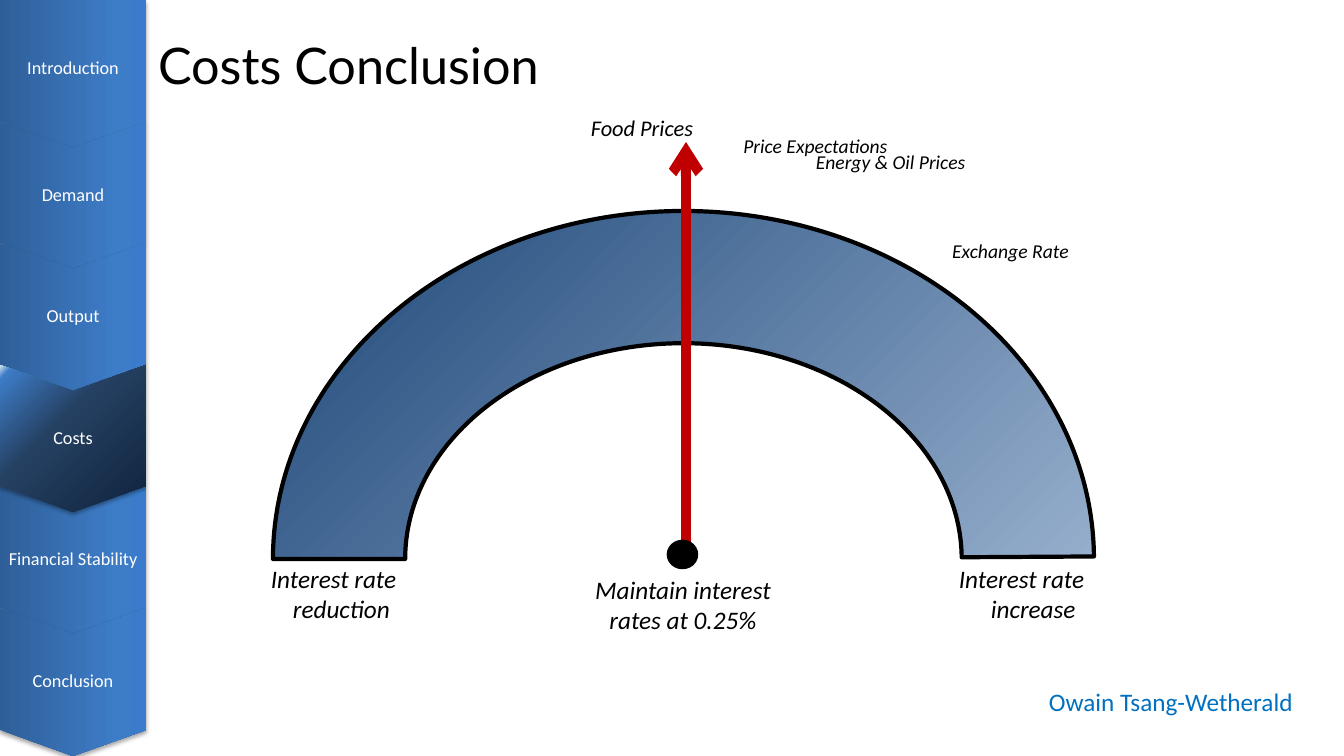
import pptx
import pptx.util
import pptx.dml.color
import pptx.enum.shapes
import pptx.enum.text
import pptx.oxml
import pptx.oxml.ns

COLORS = {"ink": "000000", "white": "FFFFFF", "author": "0070C0", "needle": "C00000"}
TAB_STOPS = [(0, "2F5F99"), (80, "3D7CC7"), (100, "3A7CCB")]
ACTIVE_STOPS = [(0, "0F243E"), (60, "254061"), (95, "3D7CC7"), (100, "DBEEF4")]
DIAL_STOPS = [(0, "B9CDE5"), (100, "1E4779")]

TABS = ["Introduction", "Demand", "Output", "Costs", "Financial Stability", "Conclusion"]
ACTIVE = "Costs"
TAB_W, TAB_STEP, TAB_TIP = 146, 121.6, 26

TITLE = ("Costs Conclusion", (140, 1, 417, 126), 36, "center", 0)
LABELS = [
    ("Interest rate reduction", (261, 558, 184, 72), 18, "left", 22),
    ("Interest rate increase", (949, 558, 184, 72), 18, "left", 32),
    ("Maintain interest rates at 0.25%", (575, 569, 216, 72), 18, "center", 0),
    ("Energy & Oil Prices", (806, 145, 188, 34), 14, "left", 0),
    ("Food Prices", (581, 109, 235, 37), 16, "left", 0),
    ("Exchange Rate", (897, 234, 227, 34), 14, "center", 0),
    ("Price Expectations", (702, 129, 227, 34), 14, "center", 0),
]
AUTHOR = ("Owain Tsang-Wetherald", (1039, 681, 290, 40), 18, "left", 0)

PX = 914400 / 100.8
NS = pptx.oxml.ns.nsdecls("a")
ALIGN = {"left": pptx.enum.text.PP_ALIGN.LEFT, "center": pptx.enum.text.PP_ALIGN.CENTER}
SHAPE = pptx.enum.shapes.MSO_SHAPE
MIDDLE = pptx.enum.text.MSO_ANCHOR.MIDDLE


def px(n):
    return pptx.util.Emu(round(n * PX))


def rgb(name):
    return pptx.dml.color.RGBColor.from_string(COLORS[name])


def set_font(p, size, color, name="Calibri", italic=False):
    p.font.size = pptx.util.Pt(size)
    p.font.name = name
    p.font.italic = italic
    p.font.color.rgb = rgb(color)


def add_label(slide, label, color="ink", name="Calibri", italic=False):
    text, box, size, align, hanging = label
    tf = slide.shapes.add_textbox(*map(px, box)).text_frame
    tf.word_wrap = True
    p = tf.paragraphs[0]
    p.text = text
    p.alignment = ALIGN[align]
    if hanging:
        pPr = p._p.get_or_add_pPr()
        pPr.set("marL", str(px(hanging)))
        pPr.set("indent", str(-px(hanging)))
    set_font(p, size, color, name, italic)
    return tf


def set_gradient(sp, stops, radial):
    gs = "".join(
        f'<a:gs pos="{pos * 1000}"><a:srgbClr val="{color}"/></a:gs>' for pos, color in stops
    )
    if radial:
        kind = '<a:path path="circle"><a:fillToRect l="100000" t="100000"/></a:path>'
    else:
        kind = '<a:lin ang="0" scaled="0"/>'
    sp.fill.background()
    old = sp._element.spPr.find(pptx.oxml.ns.qn("a:noFill"))
    new = pptx.oxml.parse_xml(
        f'<a:gradFill {NS} rotWithShape="1"><a:gsLst>{gs}</a:gsLst>{kind}</a:gradFill>'
    )
    sp._element.spPr.replace(old, new)


def add_dial(slide):
    sp = slide.shapes.add_shape(SHAPE.BLOCK_ARC, *map(px, (273, 211, 821, 696)))
    for i, value in enumerate((108, 215.79, 0.19)):
        sp.adjustments[i] = value
    sp.shadow.inherit = False
    set_gradient(sp, DIAL_STOPS, radial=True)
    sp.line.color.rgb = rgb("ink")
    sp.line.width = pptx.util.Pt(3)


def add_needle(slide):
    straight = pptx.enum.shapes.MSO_CONNECTOR.STRAIGHT
    line = slide.shapes.add_connector(straight, *map(px, (686, 549, 686, 142)))
    line.line.color.rgb = rgb("needle")
    line.line.width = pptx.util.Pt(7)
    line.line._get_or_add_ln().append(pptx.oxml.parse_xml(f'<a:tailEnd {NS} type="arrow"/>'))
    line._element.spPr.append(pptx.oxml.parse_xml(f"<a:effectLst {NS}/>"))

    hub = slide.shapes.add_shape(SHAPE.OVAL, *map(px, (669, 542, 27, 25)))
    hub.shadow.inherit = False
    hub.fill.solid()
    hub.fill.fore_color.rgb = rgb("ink")
    hub.line.color.rgb = rgb("ink")
    hub.line.width = pptx.util.Pt(3.25)


def add_tab(slide, row, text):
    top, bottom = round(row * TAB_STEP), round((row + 1) * TAB_STEP)
    mid = TAB_W // 2
    points = [(TAB_W, top), (TAB_W, bottom), (mid, bottom + TAB_TIP), (0, bottom), (0, top)]
    if row:
        points.append((mid, top + TAB_TIP))
    outline = slide.shapes.build_freeform(*points[0], scale=PX)
    outline.add_line_segments(points[1:], close=True)
    sp = outline.convert_to_shape()
    active = text == ACTIVE
    set_gradient(sp, ACTIVE_STOPS if active else TAB_STOPS, radial=active)
    sp.line.fill.background()
    sp.shadow.inherit = False
    sp._element.spPr.find(pptx.oxml.ns.qn("a:effectLst")).append(pptx.oxml.parse_xml(
        f'<a:outerShdw {NS} blurRad="39370" dist="22860" dir="5400000" rotWithShape="0">'
        f'<a:srgbClr val="{COLORS["ink"]}"><a:alpha val="35000"/></a:srgbClr></a:outerShdw>'
    ))
    tf = sp.text_frame
    tf.word_wrap = True
    tf.vertical_anchor = MIDDLE
    tf.margin_left = tf.margin_right = tf.margin_top = 0
    tf.margin_bottom = 0 if row else px(10)
    p = tf.paragraphs[0]
    p.text = text
    p.alignment = ALIGN["center"]
    p.line_spacing = 0.9
    set_font(p, 13, "white")


def main():
    prs = pptx.Presentation()
    prs.slide_width, prs.slide_height = px(1344), px(756)
    slide = prs.slides.add_slide(prs.slide_layouts[6])
    add_label(slide, TITLE, name="Lato").vertical_anchor = MIDDLE
    add_dial(slide)
    for label in LABELS:
        add_label(slide, label, italic=True)
    add_label(slide, AUTHOR, color="author")
    add_needle(slide)
    for row, text in sorted(enumerate(TABS), key=lambda tab: tab[1] == ACTIVE):
        add_tab(slide, row, text)
    prs.save("out.pptx")


if __name__ == "__main__":
    main()
